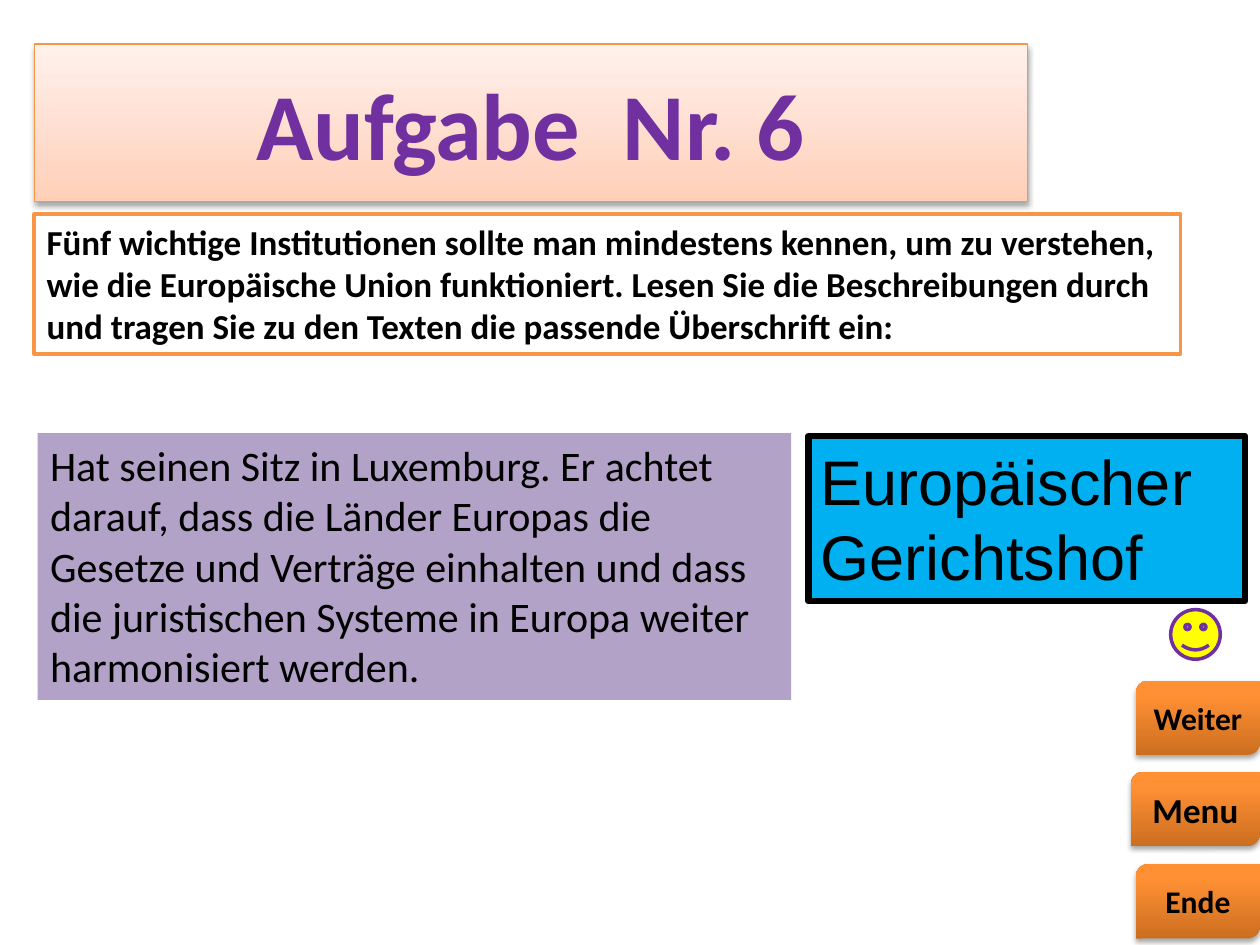
from dataclasses import dataclass
from lxml import etree
from pptx import Presentation
from pptx.dml.color import RGBColor as RGB
from pptx.enum.shapes import MSO_SHAPE as SHAPE
from pptx.enum.text import MSO_ANCHOR as ANCHOR, PP_ALIGN as ALIGN
from pptx.oxml import parse_xml
from pptx.oxml.ns import nsdecls
from pptx.util import Cm, Pt


@dataclass(frozen=True)
class Theme:
    black: str = "000000"
    purple: str = "7030A0"
    orange: str = "F79646"
    white: str = "FFFFFF"
    blue: str = "00B0F0"
    lilac: str = "B3A2C7"
    yellow: str = "FFFF00"
    title_gradient: tuple = (("FFCFB8", 0), ("FFF1EC", 1))
    button_gradient: tuple = (("CC6E20", 0), ("FF9034", 0.8))
    body_font: str = "Calibri"
    answer_font: str = "Arial"
    title_size: int = 54
    answer_size: int = 36
    text_size: int = 24
    task_size: int = 20
    button_size: int = 18


theme = Theme()
deck = Presentation()
deck.slide_width, deck.slide_height = Cm(25.4), Cm(19.05)
slide = deck.slides.add_slide(deck.slide_layouts[6])


def add_panel(kind, box, fill, line=None, line_width=0, shadow=False):
    panel = slide.shapes.add_shape(kind, *[Cm(length) for length in box])
    panel.shadow.inherit = False
    if isinstance(fill, str):
        panel.fill.solid()
        panel.fill.fore_color.rgb = RGB.from_string(fill)
    else:
        panel.fill.gradient()
        panel.fill.gradient_angle = 90
        for stop, (color, position) in zip(panel.fill.gradient_stops, fill):
            stop.color.rgb = RGB.from_string(color)
            stop.position = position
    if line:
        panel.line.color.rgb = RGB.from_string(line)
        panel.line.width = Pt(line_width)
    else:
        panel.line.fill.background()
    if shadow:
        effects = panel.element.spPr.find("{*}effectLst")
        effects.append(parse_xml(
            f'<a:outerShdw {nsdecls("a")} blurRad="{Pt(3.1)}" dist="{Pt(1.8)}" '
            f'dir="5400000" rotWithShape="0"><a:srgbClr val="{theme.black}">'
            '<a:alpha val="35000"/></a:srgbClr></a:outerShdw>'))
    return panel


def write(panel, lines, size, color=theme.black, font=theme.body_font,
          bold=False, align=ALIGN.LEFT, anchor=ANCHOR.TOP, wrap=True):
    frame = panel.text_frame
    frame.word_wrap = wrap
    frame.vertical_anchor = anchor
    for index, line in enumerate(lines):
        paragraph = frame.add_paragraph() if index else frame.paragraphs[0]
        paragraph.alignment = align
        run = paragraph.add_run()
        run.text = line
        run.font.name = font
        run.font.size = Pt(size)
        run.font.bold = bold
        run.font.color.rgb = RGB.from_string(color)


title = add_panel(SHAPE.RECTANGLE, (0.69, 0.89, 20.02, 3.18),
                  theme.title_gradient, theme.orange, 0.75, shadow=True)
write(title, ["Aufgabe  Nr. 6"], theme.title_size, theme.purple, bold=True,
      align=ALIGN.CENTER, anchor=ANCHOR.MIDDLE)

task = add_panel(SHAPE.RECTANGLE, (0.69, 4.32, 23.11, 2.82),
                 theme.white, theme.orange, 2)
write(task, ["Fünf wichtige Institutionen sollte man mindestens kennen, um zu "
             "verstehen, wie die Europäische Union funktioniert. Lesen Sie die "
             "Beschreibungen durch und tragen Sie zu den Texten die passende "
             "Überschrift ein:"], theme.task_size, bold=True)

answer = add_panel(SHAPE.RECTANGLE, (16.3, 8.79, 8.8, 3.33),
                   theme.blue, theme.black, 3.75)
write(answer, ["Europäischer", "Gerichtshof"], theme.answer_size,
      font=theme.answer_font)

description = add_panel(SHAPE.RECTANGLE, (0.76, 8.73, 15.19, 5.38), theme.lilac)
write(description, ["Hat seinen Sitz in Luxemburg. Er achtet darauf, dass die "
                    "Länder Europas die Gesetze und Verträge einhalten und dass "
                    "die juristischen Systeme in Europa weiter harmonisiert "
                    "werden."], theme.text_size)

for label, left, top, size in (
    ("Weiter", 22.9, 13.72, theme.button_size),
    ("Menu", 22.8, 15.56, theme.task_size),
    ("Ende", 22.9, 17.42, theme.button_size),
):
    button = add_panel(SHAPE.ROUND_2_DIAG_RECTANGLE, (left, top, 25.4 - left, 1.5),
                       theme.button_gradient, shadow=True)
    write(button, [label], size, bold=True, align=ALIGN.CENTER,
          anchor=ANCHOR.MIDDLE, wrap=False)

add_panel(SHAPE.SMILEY_FACE, (23.6, 12.29, 1, 1), theme.yellow, theme.purple, 2)

deck.save("out.pptx")
